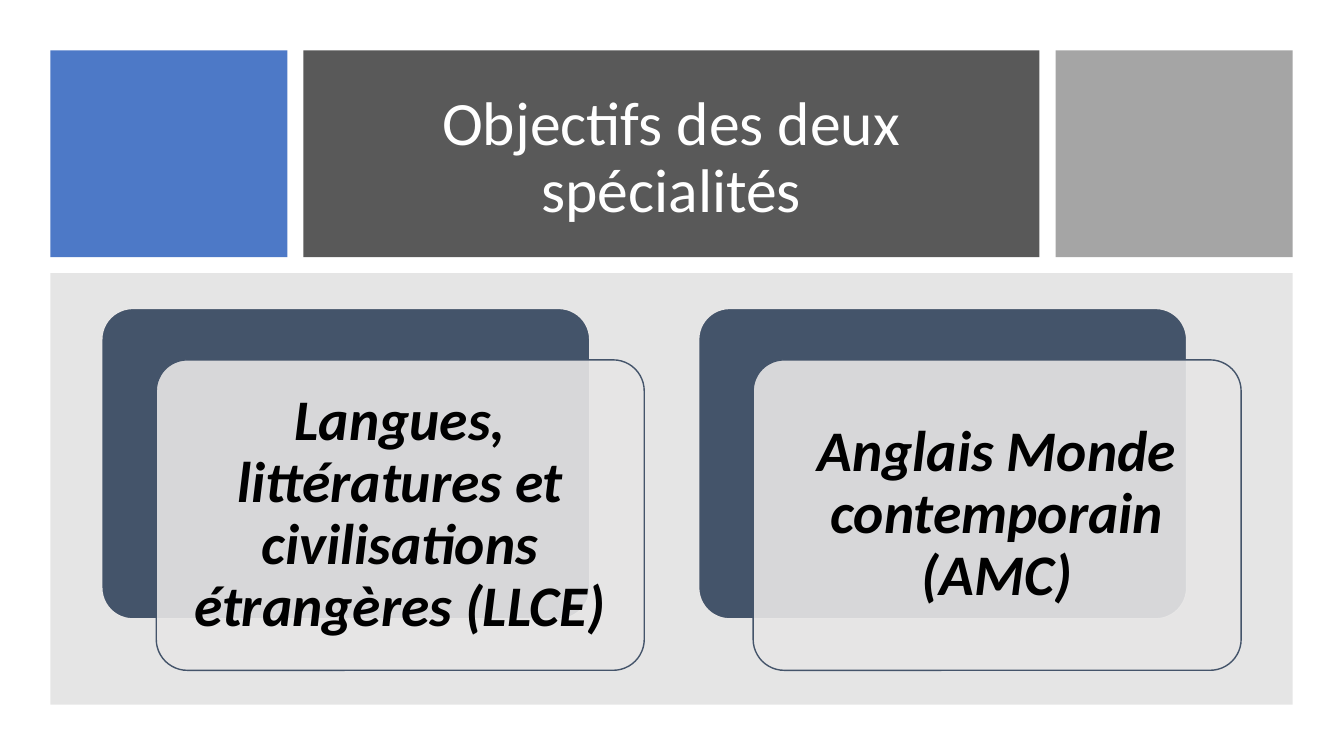
from lxml.etree import SubElement
from pptx import Presentation
from pptx.dml.color import RGBColor
from pptx.enum.shapes import MSO_SHAPE
from pptx.enum.text import MSO_ANCHOR, MSO_AUTO_SIZE, PP_ALIGN
from pptx.oxml.ns import qn
from pptx.util import Inches, Pt

BLUE = RGBColor(0x44, 0x72, 0xC4)
CHARCOAL = RGBColor(0x59, 0x59, 0x59)
SILVER = RGBColor(0xA5, 0xA5, 0xA5)
GRAY = RGBColor(0x80, 0x80, 0x80)
NAVY = RGBColor(0x44, 0x54, 0x6A)
PALE = RGBColor(0xE7, 0xE6, 0xE6)
WHITE = RGBColor(0xFF, 0xFF, 0xFF)
BLACK = RGBColor(0x00, 0x00, 0x00)


class SlideBuilder:
    font = "Calibri"
    card_size = (4.84, 3.08)
    card_offset = (0.54, 0.51)
    label_inset = 0.09
    label_margin = 0.17

    def __init__(self, prs):
        self.s = prs.slides.add_slide(prs.slide_layouts[5])

    def block(self, box, color, opacity=100, line=None, kind=MSO_SHAPE.RECTANGLE):
        """Add a filled shape; opacity is a percentage."""
        sp = self.s.shapes.add_shape(kind, *map(Inches, box))
        sp.shadow.inherit = False
        sp.fill.solid()
        sp.fill.fore_color.rgb = color
        if opacity < 100:
            clr = sp.element.spPr.find(qn("a:solidFill"))[0]
            SubElement(clr, qn("a:alpha"), val=str(opacity * 1000))
        if line is None:
            sp.line.fill.background()
        else:
            sp.line.color.rgb = line
            sp.line.width = Pt(1)
        return sp

    def centered_text(self, sp, text, size, color, emphasis=False):
        """Fill a shape with one centred run."""
        tf = sp.text_frame
        tf.word_wrap = True
        tf.auto_size = MSO_AUTO_SIZE.NONE
        tf.vertical_anchor = MSO_ANCHOR.MIDDLE
        p = tf.paragraphs[0]
        p.alignment = PP_ALIGN.CENTER
        p.line_spacing = 0.9
        r = p.add_run()
        r.text = text
        r.font.name = self.font
        r.font.size = Pt(size)
        r.font.color.rgb = color
        r.font.bold = r.font.italic = emphasis
        return tf

    def title(self, box, text):
        sp = self.s.shapes.title
        sp.left, sp.top, sp.width, sp.height = map(Inches, box)
        self.centered_text(sp, text, 44, WHITE)
        # Bring the title in front of its panel
        self.s.shapes.element.append(sp.element)

    def card(self, left, top, text):
        """Add two overlapping rounded panels with a label on the front one."""
        w, h = self.card_size
        dx, dy = self.card_offset
        x, y = left + dx, top + dy
        rounded = MSO_SHAPE.ROUNDED_RECTANGLE
        back = self.block((left, top, w, h), NAVY, line=PALE, kind=rounded)
        front = self.block((x, y, w, h), PALE, 90, line=NAVY, kind=rounded)
        back.adjustments[0] = front.adjustments[0] = 0.1

        d = self.label_inset
        label = self.s.shapes.add_textbox(
            *map(Inches, (x + d, y + d, w - 2 * d, h - 2 * d)))
        tf = self.centered_text(label, text, 41, BLACK, emphasis=True)
        tf.margin_left = tf.margin_right = Inches(self.label_margin)
        tf.margin_top = tf.margin_bottom = Inches(self.label_margin)


def main():
    prs = Presentation()
    prs.slide_width, prs.slide_height = Inches(13.33), Inches(7.5)
    slide = SlideBuilder(prs)

    slide.block((0.5, 0.5, 2.35, 2.05), BLUE, 95)
    slide.block((3.01, 0.5, 7.3, 2.05), CHARCOAL)
    slide.title((3.33, 0.8, 6.66, 1.56), "Objectifs des deux spécialités")
    slide.block((10.47, 0.5, 2.35, 2.05), SILVER)
    slide.block((0.5, 2.71, 12.32, 4.28), GRAY, 20)

    specialties = (
        "Langues, littératures et civilisations étrangères (LLCE)",
        "Anglais Monde contemporain (AMC)",
    )
    for i, specialty in enumerate(specialties):
        slide.card(1.01 + 5.92 * i, 3.06, specialty)

    prs.save("out.pptx")


if __name__ == "__main__":
    main()
